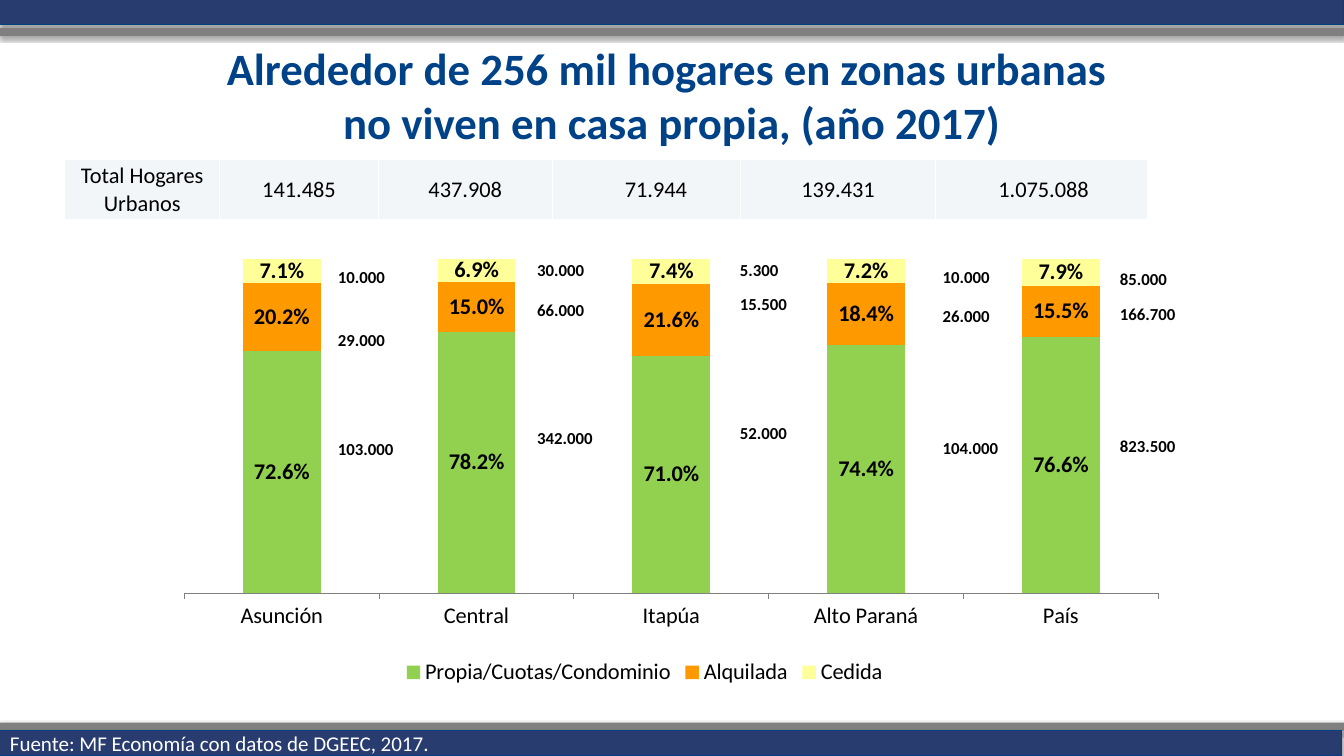
import pptx
import pptx.chart.data
import pptx.dml.color
import pptx.enum.chart
import pptx.enum.shapes
import pptx.enum.text
import pptx.oxml
import pptx.oxml.ns
import pptx.util

Cm = pptx.util.Cm
Pt = pptx.util.Pt
RGBColor = pptx.dml.color.RGBColor
NAVY = RGBColor(0x29, 0x3C, 0x70)
BLUE = RGBColor(0x00, 0x41, 0x84)
TITLE_BLUE = RGBColor(0x00, 0x42, 0x87)
GRAY = RGBColor(0x80, 0x80, 0x80)
PALE = RGBColor(0xF3, 0xF6, 0xF9)
GREEN = RGBColor(0x92, 0xD0, 0x50)
ORANGE = RGBColor(0xFF, 0x99, 0x00)
YELLOW = RGBColor(0xFF, 0xFF, 0x99)
BLACK = RGBColor(0, 0, 0)
WHITE = RGBColor(0xFF, 0xFF, 0xFF)

FONT = "Calibri"
WIDTH, HEIGHT = 33.87, 19.05
NAMESPACE = pptx.oxml.ns.nsdecls("a")
SHADOW = (
    f'<a:effectLst {NAMESPACE}><a:outerShdw blurRad="39370" dist="22860" dir="5400000" rotWithShape="0">'
    '<a:srgbClr val="000000"><a:alpha val="35000"/></a:srgbClr></a:outerShdw></a:effectLst>'
)

CITIES = ["Asunción", "Central", "Itapúa", "Alto Paraná", "País"]
SERIES = [
    ("Propia/Cuotas/Condominio", (0.726, 0.782, 0.71, 0.744, 0.766), GREEN),
    ("Alquilada", (0.202, 0.15, 0.216, 0.184, 0.155), ORANGE),
    ("Cedida", (0.071, 0.069, 0.074, 0.072, 0.079), YELLOW),
]
TOTALS = [
    ("Total Hogares\nUrbanos", 3.91, 0.03),
    ("141.485", 3.99, 0.03),
    ("437.908", 4.39, 0.03),
    ("71.944", 4.75, 0.5),
    ("139.431", 4.9, 0.03),
    ("1.075.088", 5.36, 0.13),
]
COUNTS = [
    (8.26, 6.6, (1.6, 0.94, 3.99), 1.93, ("10.000", "29.000", "103.000")),
    (13.28, 6.43, (1.02, 0.86, 4.45), 2.5, ("30.000", "66.000", "342.000")),
    (18.39, 6.43, (0.86, 0.94, 3.99), 2.45, ("5.300", "15.500", "52.000")),
    (23.5, 6.6, (0.99, 0.94, 3.99), 2.53, ("10.000", "26.000", "104.000")),
    (27.97, 6.65, (0.89, 0.94, 3.99), 2.53, ("85.000", "166.700", "823.500")),
]


def style_text(frame, size, color, bold=False, align=None):
    """Format every run of a text frame."""
    for para in frame.paragraphs:
        para.alignment = align
        for span in para.runs:
            span.font.name = FONT
            span.font.size = Pt(size)
            span.font.bold = bold
            span.font.color.rgb = color


def set_borders(cell, color=None):
    """Draw all four cell borders in a colour, or hide them."""
    paint = f'<a:solidFill><a:srgbClr val="{color}"/></a:solidFill>' if color else "<a:noFill/>"
    properties = cell._tc.get_or_add_tcPr()
    for side in ("lnL", "lnR", "lnT", "lnB"):
        properties.append(pptx.oxml.parse_xml(f'<a:{side} {NAMESPACE} w="12700">{paint}</a:{side}>'))


def add_plain_table(page, left, top, widths, heights):
    """Add a table without header or banded styling."""
    frame = page.shapes.add_table(
        len(heights), len(widths), Cm(left), Cm(top), Cm(sum(widths)), Cm(sum(heights))
    )
    table = frame.table
    table.first_row = table.horz_banding = False
    for column, width in zip(table.columns, widths):
        column.width = Cm(width)
    for row, height in zip(table.rows, heights):
        row.height = Cm(height)
    return table


def add_bar(page, left, top, height, color, outline=None):
    """Add a full-width shadowed band."""
    bar = page.shapes.add_shape(
        pptx.enum.shapes.MSO_SHAPE.RECTANGLE, Cm(left), Cm(top), Cm(WIDTH), Cm(height)
    )
    bar.fill.solid()
    bar.fill.fore_color.rgb = color
    if outline:
        bar.line.color.rgb = outline
        bar.line.width = Pt(0.75)
    else:
        bar.line.fill.background()
    bar._element.spPr.append(pptx.oxml.parse_xml(SHADOW))


def add_bands(page):
    """Add the header and footer bands."""
    add_bar(page, 0, 18.21, 0.2, GRAY)
    add_bar(page, -0.05, 18.42, 0.63, NAVY, BLUE)
    add_bar(page, 0, 0, 0.63, NAVY, BLUE)
    add_bar(page, 0, 0.71, 0.2, GRAY)


def add_title(page, left, top, width, height):
    """Fill and place the title placeholder."""
    title = page.shapes.title
    title.left, title.top, title.width, title.height = Cm(left), Cm(top), Cm(width), Cm(height)
    frame = title.text_frame
    frame.text = "Alrededor de 256 mil hogares en zonas urbanas \vno viven en casa propia, (año 2017)"
    frame.auto_size = pptx.enum.text.MSO_AUTO_SIZE.NONE
    frame.vertical_anchor = pptx.enum.text.MSO_ANCHOR.MIDDLE
    style_text(frame, 32, TITLE_BLUE, True, pptx.enum.text.PP_ALIGN.CENTER)


def add_totals(page, left, top, height):
    """Add the row of urban household totals."""
    table = add_plain_table(page, left, top, [width for _, width, _ in TOTALS], [height])
    for cell, (text, _, indent) in zip(table.iter_cells(), TOTALS):
        set_borders(cell, WHITE)
        cell.fill.solid()
        cell.fill.fore_color.rgb = PALE
        cell.margin_left = Cm(indent)
        cell.margin_right = cell.margin_top = Cm(0.03)
        cell.margin_bottom = 0
        cell.vertical_anchor = pptx.enum.text.MSO_ANCHOR.MIDDLE
        cell.text_frame.text = text
        style_text(cell.text_frame, 16, BLACK, align=pptx.enum.text.PP_ALIGN.CENTER)


def add_source(page, left, top, width, height):
    """Add the source line over the footer band."""
    box = page.shapes.add_textbox(Cm(left), Cm(top), Cm(width), Cm(height))
    box.text_frame.word_wrap = True
    box.text_frame.text = "Fuente: MF Economía con datos de DGEEC, 2017."
    style_text(box.text_frame, 15, WHITE)


def set_plot_area(chart, x, y, width, height):
    """Fix the inner plot area as fractions of the chart."""
    parts = "".join(
        f'<c:{name} val="{value}"/>'
        for name, value in (
            ("layoutTarget", "inner"), ("xMode", "edge"), ("yMode", "edge"),
            ("x", x), ("y", y), ("w", width), ("h", height),
        )
    )
    area = chart._chartSpace.chart.plotArea
    for layout in area.findall(pptx.oxml.ns.qn("c:layout")):
        area.remove(layout)
    namespace = pptx.oxml.ns.nsdecls("c")
    area.insert(0, pptx.oxml.parse_xml(
        f"<c:layout {namespace}><c:manualLayout>{parts}</c:manualLayout></c:layout>"
    ))


def add_tenure_chart(page, left, top, width, height):
    """Add the stacked columns of housing tenure."""
    data = pptx.chart.data.CategoryChartData(number_format="0.0%")
    data.categories = CITIES
    for name, values, _ in SERIES:
        data.add_series(name, values)
    chart = page.shapes.add_chart(
        pptx.enum.chart.XL_CHART_TYPE.COLUMN_STACKED, Cm(left), Cm(top), Cm(width), Cm(height), data
    ).chart
    chart.has_title = False
    chart.font.name = FONT
    chart.font.size = Pt(16)
    chart.font.color.rgb = BLACK
    chart.has_legend = True
    chart.legend.position = pptx.enum.chart.XL_LEGEND_POSITION.BOTTOM
    chart.legend.include_in_layout = False
    chart.value_axis.visible = False
    chart.value_axis.has_major_gridlines = False
    chart.value_axis.minimum_scale = 0
    chart.value_axis.maximum_scale = 1
    chart.category_axis.format.line.color.rgb = GRAY
    chart.category_axis.major_tick_mark = pptx.enum.chart.XL_TICK_MARK.OUTSIDE
    plot = chart.plots[0]
    plot.gap_width = 150
    plot.overlap = 100
    plot.vary_by_categories = False
    for series, (_, _, color) in zip(plot.series, SERIES):
        series.format.fill.solid()
        series.format.fill.fore_color.rgb = color
        labels = series.data_labels
        labels.show_value = True
        labels.number_format = "0.0%"
        labels.number_format_is_linked = False
        labels.font.name = FONT
        labels.font.size = Pt(16)
        labels.font.bold = True
        labels.font.color.rgb = BLACK
    set_plot_area(chart, 0.068, 0.034, 0.914, 0.748)


def add_counts(page, left, top, heights, drop, counts):
    """Add the household counts beside one column, the last one dropped lower."""
    table = add_plain_table(page, left, top, [3.1], heights)
    for cell, text, margin in zip(table.iter_cells(), counts, (0.13, 0.13, drop)):
        set_borders(cell)
        cell.fill.background()
        cell.margin_top = Cm(margin)
        cell.text_frame.text = text
        style_text(cell.text_frame, 12, BLACK, True)


def main():
    """Build and save the slide."""
    deck = pptx.Presentation()
    deck.slide_width, deck.slide_height = Cm(WIDTH), Cm(HEIGHT)
    page = deck.slides.add_slide(deck.slide_layouts[5])
    add_bands(page)
    add_title(page, 0, 1.37, WIDTH, 2.03)
    add_totals(page, 1.63, 4.01, 1.52)
    add_source(page, 0, 18.29, 26.19, 0.89)
    add_tenure_chart(page, 2.82, 6.15, 26.85, 11.25)
    for column in COUNTS:
        add_counts(page, *column)
    deck.save("out.pptx")


if __name__ == "__main__":
    main()
